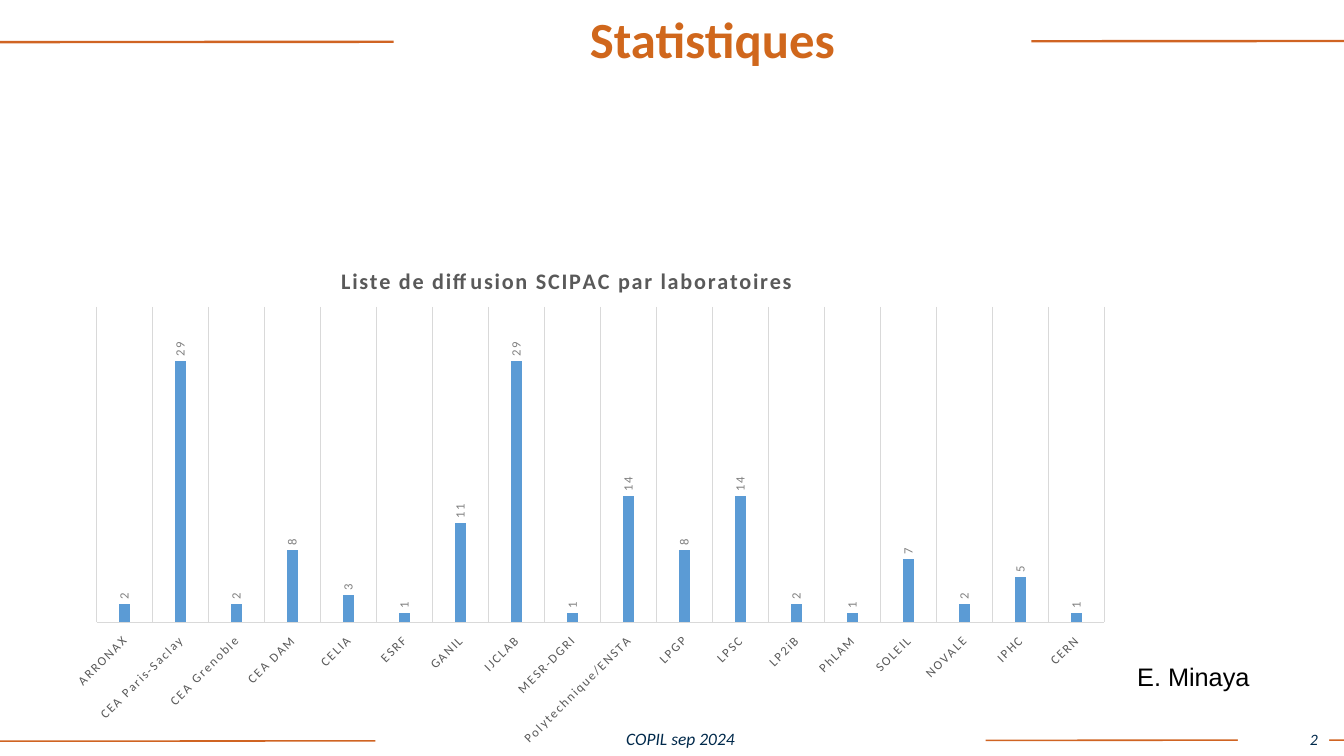
from lxml import etree
from pptx import Presentation
from pptx.chart.data import CategoryChartData
from pptx.dml.color import RGBColor
from pptx.enum.chart import XL_CHART_TYPE as ChartType, XL_LABEL_POSITION as LabelPosition
from pptx.enum.chart import XL_TICK_LABEL_POSITION as TickLabels, XL_TICK_MARK as TickMark
from pptx.enum.shapes import MSO_CONNECTOR as Connector, MSO_SHAPE as Shape
from pptx.enum.text import MSO_ANCHOR as Anchor, PP_ALIGN as Align
from pptx.oxml import parse_xml
from pptx.oxml.ns import nsdecls, qn
from pptx.util import Pt

COLORS = {
    "white": "FFFFFF", "black": "000000", "rule": "D06423", "title": "D0671C",
    "footer": "00294B", "bar": "5B9BD5", "grid": "D9D9D9",
    "axis text": "595959", "value text": "808080",
}
SLIDE_WIDTH, SLIDE_HEIGHT = 848.16, 477.36

# right y, left y, width
RULES = [(467.3, 468, 1), (25.9, 26.6, 1.5)]

# text, (left, top, width, height), alignment, size, color, bold, italic, line spacing
BANDS = [
    ("COPIL sep 2024", (236.9, 456.5, 385.2, 20.2), Align.CENTER, 11, "footer", False, True, 1),
    ("2", (781.2, 456.5, 57.6, 20.9), Align.RIGHT, 10, "footer", False, True, 1),
    ("Statistiques", (248.4, 0.7, 402.5, 51.1), Align.CENTER, 32, "title", True, False, 0.9),
]
AUTHOR = "E. Minaya"
AUTHOR_BOX = (710.6, 414, 105.1, 26.6)

CHART_TITLE = "Liste de diffusion SCIPAC par laboratoires"
CHART_BOX = (33.1, 149.8, 678.2, 326.2)
MEMBERS = {
    "ARRONAX": 2, "CEA Paris-Saclay": 29, "CEA Grenoble": 2, "CEA DAM": 8,
    "CELIA": 3, "ESRF": 1, "GANIL": 11, "IJCLAB": 29, "MESR-DGRI": 1,
    "Polytechnique/ENSTA": 14, "LPGP": 8, "LPSC": 14, "LP2iB": 2, "PhLAM": 1,
    "SOLEIL": 7, "NOVALE": 2, "IPHC": 5, "CERN": 1,
}
# Fractions of the chart box
PLOT_LAYOUT = {"x": 0.041, "y": 0.135, "w": 0.938, "h": 0.611}
TITLE_LAYOUT = {"x": 0.265, "y": 0.046}


def rgb(name):
    return RGBColor.from_string(COLORS[name])


def points(lengths):
    return [Pt(length) for length in lengths]


def style_font(font, size, color, name="Calibri", bold=False, italic=False):
    font.name, font.size, font.bold, font.italic = name, Pt(size), bold, italic
    font.color.rgb = rgb(color)


def add_rule(slide, right_y, left_y, width):
    ends = points((SLIDE_WIDTH, right_y, 0, left_y))
    line = slide.shapes.add_connector(Connector.STRAIGHT, *ends)
    line.line.color.rgb = rgb("rule")
    line.line.width = Pt(width)
    etree.SubElement(line.element.spPr, qn("a:effectLst"))


def add_band(slide, text, place, align, size, color, bold, italic, spacing):
    """White text box that interrupts the rule behind it."""
    band = slide.shapes.add_shape(Shape.RECTANGLE, *points(place))
    band.shadow.inherit = False
    band.fill.solid()
    band.fill.fore_color.rgb = rgb("white")
    band.line.fill.background()
    frame = band.text_frame
    frame.vertical_anchor = Anchor.MIDDLE
    para = frame.paragraphs[0]
    para.alignment, para.line_spacing = align, spacing
    span = para.add_run()
    span.text = text
    style_font(span.font, size, color, bold=bold, italic=italic)


def add_author(slide):
    box = slide.shapes.add_textbox(*points(AUTHOR_BOX))
    box.text_frame.word_wrap = True
    span = box.text_frame.paragraphs[0].add_run()
    span.text = AUTHOR
    style_font(span.font, 16, "black", name="Arial")


def set_layout(parent, fractions):
    """Place a chart part by fractions of the chart box."""
    layout = parent.find(qn("c:layout"))
    if layout is None:
        layout = etree.Element(qn("c:layout"))
        parent.insert(0, layout)
    manual = etree.SubElement(layout, qn("c:manualLayout"))
    settings = {"xMode": "edge", "yMode": "edge", **fractions}
    if "w" in fractions:
        settings = {"layoutTarget": "inner", **settings}
    for tag, value in settings.items():
        etree.SubElement(manual, qn(f"c:{tag}")).set("val", str(value))


def turn_text(element, degrees):
    """Rotate chart text and space its letters by one point."""
    text = element.find(qn("c:txPr"))
    body = text.find(qn("a:bodyPr"))
    body.set("rot", str(degrees * 60000))
    body.set("vert", "horz")
    for properties in text.iter(qn("a:defRPr")):
        properties.set("spc", "100")


def add_members_chart(slide):
    data = CategoryChartData()
    data.categories = list(MEMBERS)
    data.add_series("Series 1", list(MEMBERS.values()))
    chart = slide.shapes.add_chart(ChartType.COLUMN_CLUSTERED, *points(CHART_BOX), data).chart
    style_font(chart.font, 10, "black")
    chart.has_legend = False

    chart.has_title = True
    title = chart.chart_title
    span = title.text_frame.paragraphs[0].add_run()
    span.text = CHART_TITLE
    style_font(span.font, 14, "axis text", bold=True)
    span.font._element.set("spc", "100")
    set_layout(title._element, TITLE_LAYOUT)

    labs = chart.category_axis
    labs.major_tick_mark = labs.minor_tick_mark = TickMark.NONE
    labs.tick_label_position = TickLabels.LOW
    labs.has_major_gridlines = True
    for line in (labs.format.line, labs.major_gridlines.format.line):
        line.color.rgb = rgb("grid")
        line.width = Pt(0.75)
    style_font(labs.tick_labels.font, 8, "axis text")
    turn_text(labs._element, -45)

    counts = chart.value_axis
    counts.minimum_scale, counts.maximum_scale = 0, 35
    counts.has_major_gridlines = False
    counts.visible = False

    plot = chart.plots[0]
    plot.vary_by_categories = False
    plot.gap_width, plot.overlap = 444, -90
    bars = plot.series[0]
    bars.format.fill.solid()
    bars.format.fill.fore_color.rgb = rgb("bar")
    labels = bars.data_labels
    labels.show_value = True
    labels.position = LabelPosition.OUTSIDE_END
    style_font(labels.font, 8, "value text")
    turn_text(labels._element, -90)

    body = chart._chartSpace.find(qn("c:chart"))
    set_layout(body.find(qn("c:plotArea")), PLOT_LAYOUT)
    body.addnext(parse_xml(
        f'<c:spPr {nsdecls("c", "a")}><a:noFill/><a:ln><a:noFill/></a:ln></c:spPr>'))


def main():
    deck = Presentation()
    deck.slide_width, deck.slide_height = points((SLIDE_WIDTH, SLIDE_HEIGHT))
    slide = deck.slides.add_slide(deck.slide_layouts[6])
    for rule in RULES:
        add_rule(slide, *rule)
    for band in BANDS:
        add_band(slide, *band)
    add_author(slide)
    add_members_chart(slide)
    deck.save("out.pptx")


if __name__ == "__main__":
    main()
